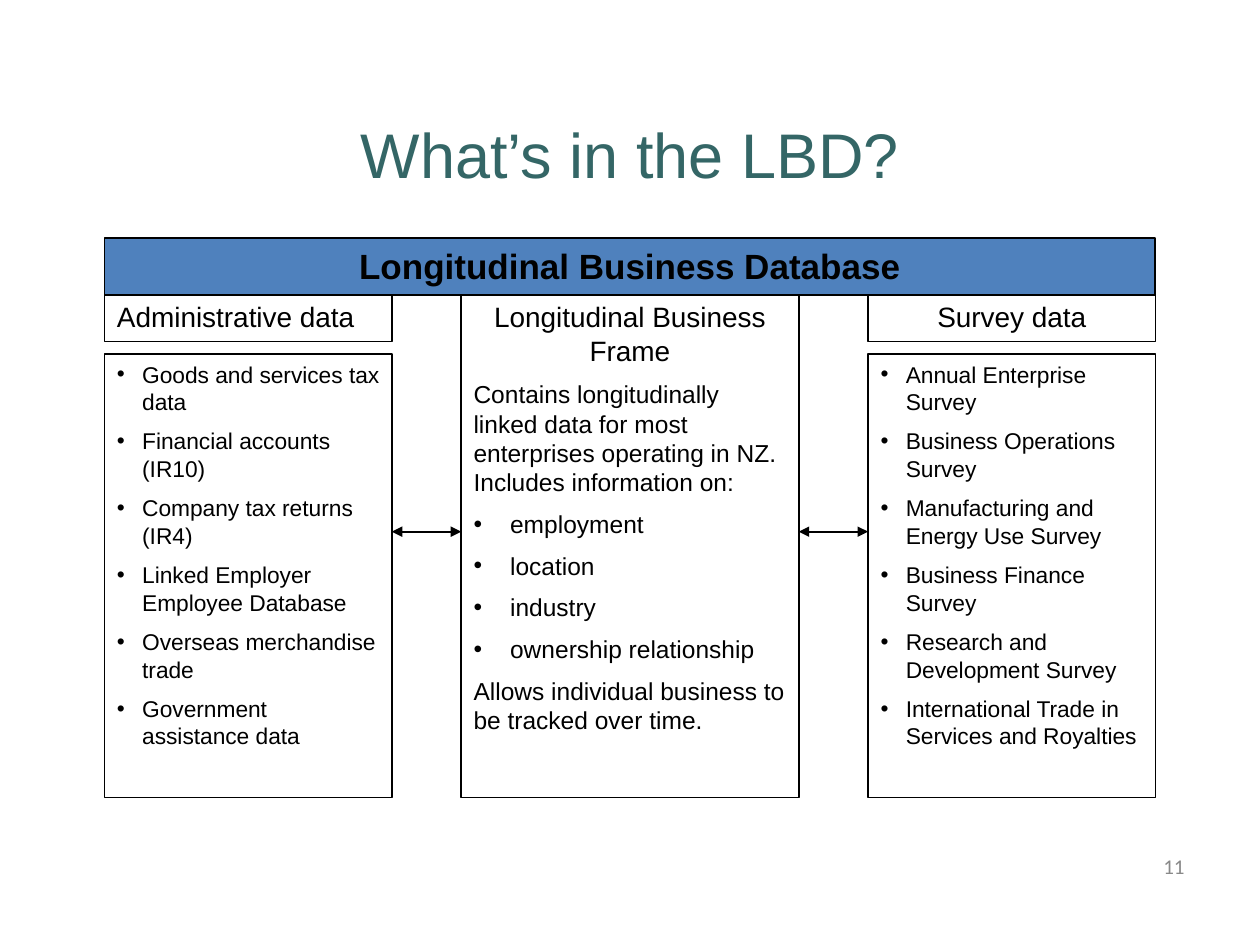
import pptx
import pptx.util
import pptx.dml.color
import pptx.enum.shapes
import pptx.enum.text
import pptx.oxml.ns
from lxml import etree

Inches = pptx.util.Inches
Pt = pptx.util.Pt
qn = pptx.oxml.ns.qn
ALIGN = pptx.enum.text.PP_ALIGN
ANCHOR = pptx.enum.text.MSO_ANCHOR
COLORS = {"ink": "000000", "title": "346666", "band": "4F81BD", "number": "898989"}

# Grid, in inches
LEFT, WIDTH, TOP, HEAD = 0.83, 8.34, 2.33, 0.38
SIDE, GAP = 2.28, 0.55
MID = WIDTH - 2 * (SIDE + GAP)
RIGHT = LEFT + WIDTH - SIDE
BODY, LOW = 2.81, 6.33

ADMIN = [
    "Goods and services tax data",
    "Financial accounts (IR10)",
    "Company tax returns (IR4)",
    "Linked Employer Employee Database",
    "Overseas merchandise trade",
    "Government assistance data",
]
SURVEYS = [
    "Annual Enterprise Survey",
    "Business Operations Survey",
    "Manufacturing and Energy Use Survey",
    "Business Finance Survey",
    "Research and Development Survey",
    "International Trade in Services and Royalties",
]
TOPICS = ["employment", "location", "industry", "ownership relationship"]


def rgb(name):
    return pptx.dml.color.RGBColor.from_string(COLORS[name])


def style(para, size, color="ink", align=ALIGN.LEFT, face="Arial", bold=False):
    para.alignment = align
    for run in para.runs:
        font = run.font
        font.name, font.size, font.bold = face, Pt(size), bold
        font.color.rgb = rgb(color)


def bullet(para, indent):
    props = para._p.get_or_add_pPr()
    props.set("marL", str(Inches(indent)))
    props.set("indent", str(-Inches(indent)))
    etree.SubElement(props, qn("a:buFont")).set("typeface", "Arial")
    etree.SubElement(props, qn("a:buChar")).set("char", "•")


def fill_text(frame, rows):
    """Each row is text, size, alignment, bullet indent."""
    frame.text = "\n".join(row[0] for row in rows)
    for i, (para, row) in enumerate(zip(frame.paragraphs, rows)):
        _, size, align, indent = row
        if indent:
            bullet(para, indent)
        if i:
            para.space_before = Pt(7)
        style(para, size, align=align)


def panel(slide, box, rows, fill=None):
    shape = slide.shapes.add_shape(
        pptx.enum.shapes.MSO_SHAPE.RECTANGLE, *map(Inches, box))
    shape.shadow.inherit = False
    if fill:
        shape.fill.solid()
        shape.fill.fore_color.rgb = rgb(fill)
    else:
        shape.fill.background()
    shape.line.color.rgb = rgb("ink")
    shape.line.width = Pt(1)
    frame = shape.text_frame
    frame.word_wrap = True
    frame.vertical_anchor = ANCHOR.TOP
    fill_text(frame, rows)
    return shape


def arrow(slide, x, y, width):
    line = slide.shapes.add_connector(
        pptx.enum.shapes.MSO_CONNECTOR.STRAIGHT,
        Inches(x), Inches(y), Inches(x + width), Inches(y))
    line.line.color.rgb = rgb("ink")
    line.line.width = Pt(1)
    for end in ("a:headEnd", "a:tailEnd"):
        etree.SubElement(line.line._get_or_add_ln(), qn(end)).set("type", "triangle")
    etree.SubElement(line._element.spPr, qn("a:effectLst"))


def title(slide, box):
    shape = slide.shapes.title
    shape.left, shape.top, shape.width, shape.height = map(Inches, box)
    shape.text_frame.text = "What’s in the LBD?"
    shape.text_frame.vertical_anchor = ANCHOR.MIDDLE
    style(shape.text_frame.paragraphs[0], 36, "title", ALIGN.CENTER)


def side(slide, x, head, align, items):
    panel(slide, (x, TOP, SIDE, HEAD), [(head, 16, align, 0)])
    panel(slide, (x, BODY, SIDE, LOW - BODY),
          [(item, 13, ALIGN.LEFT, 0.2) for item in items])


def middle(slide, box):
    intro = ("Contains longitudinally linked data for most enterprises "
             "operating in NZ. Includes information on:")
    close = "Allows individual business to be tracked over time."
    panel(slide, box, [
        ("Longitudinal Business Frame", 16, ALIGN.CENTER, 0),
        (intro, 14, ALIGN.LEFT, 0),
        *[(topic, 14, ALIGN.LEFT, 0.29) for topic in TOPICS],
        (close, 14, ALIGN.LEFT, 0),
    ])


def banner(slide, box):
    shape = panel(slide, box,
                  [("Longitudinal Business Database", 20, ALIGN.CENTER, 0)], "band")
    shape.text_frame.paragraphs[0].runs[0].font.bold = True


def number(slide, box):
    frame = slide.shapes.add_textbox(*map(Inches, box)).text_frame
    frame.word_wrap = True
    frame.vertical_anchor = ANCHOR.MIDDLE
    frame.text = "11"
    style(frame.paragraphs[0], 12, "number", ALIGN.RIGHT, "Calibri")


def main():
    deck = pptx.Presentation()
    deck.slide_width, deck.slide_height = Inches(10), Inches(7.5)
    slide = deck.slides.add_slide(deck.slide_layouts[5])
    title(slide, (0.5, 0.76, 9, 0.92))
    number(slide, (7.17, 6.75, 2.33, 0.25))

    # Three columns under one banner
    center = LEFT + SIDE + GAP
    middle(slide, (center, TOP, MID, LOW - TOP))
    side(slide, LEFT, "Administrative data", ALIGN.LEFT, ADMIN)
    side(slide, RIGHT, "Survey data", ALIGN.CENTER, SURVEYS)
    banner(slide, (LEFT, 1.89, WIDTH, 0.45))

    # Links between the columns
    for x in (LEFT + SIDE, center + MID):
        arrow(slide, x, 4.22, GAP)
    deck.save("out.pptx")


if __name__ == "__main__":
    main()
